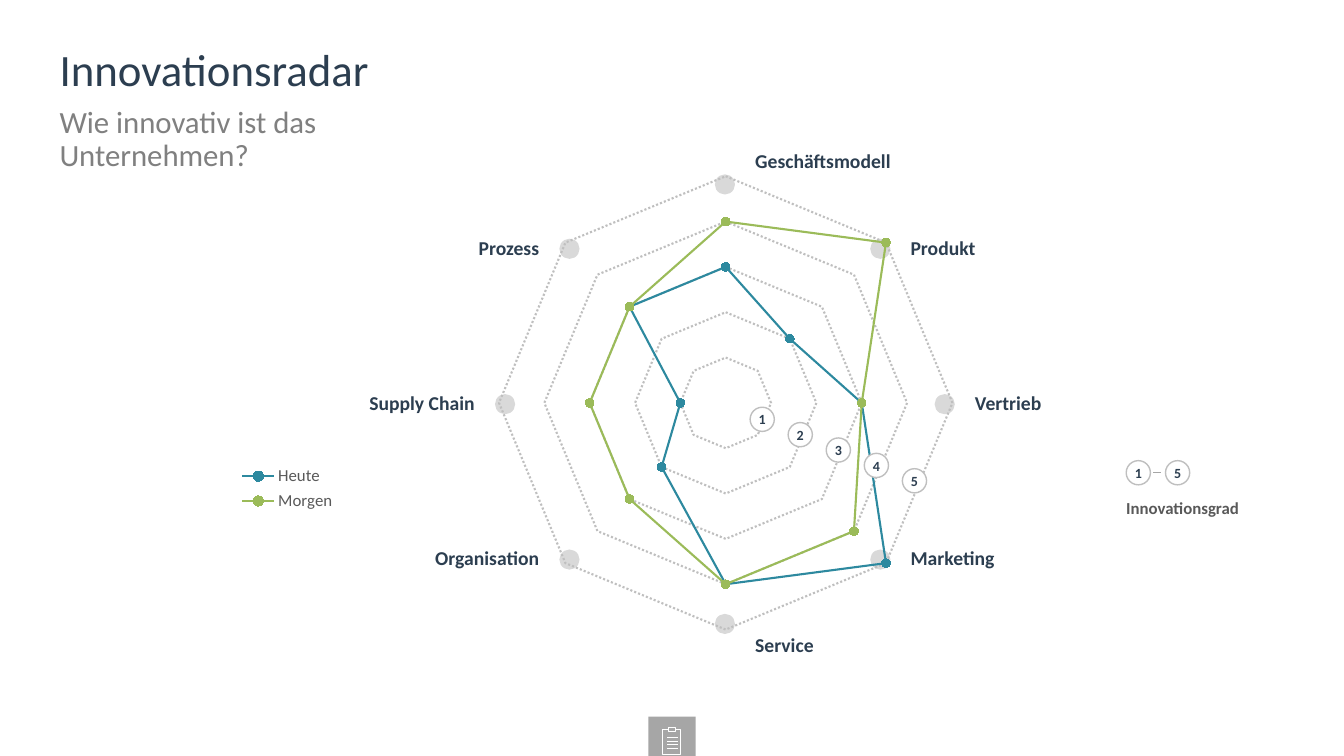
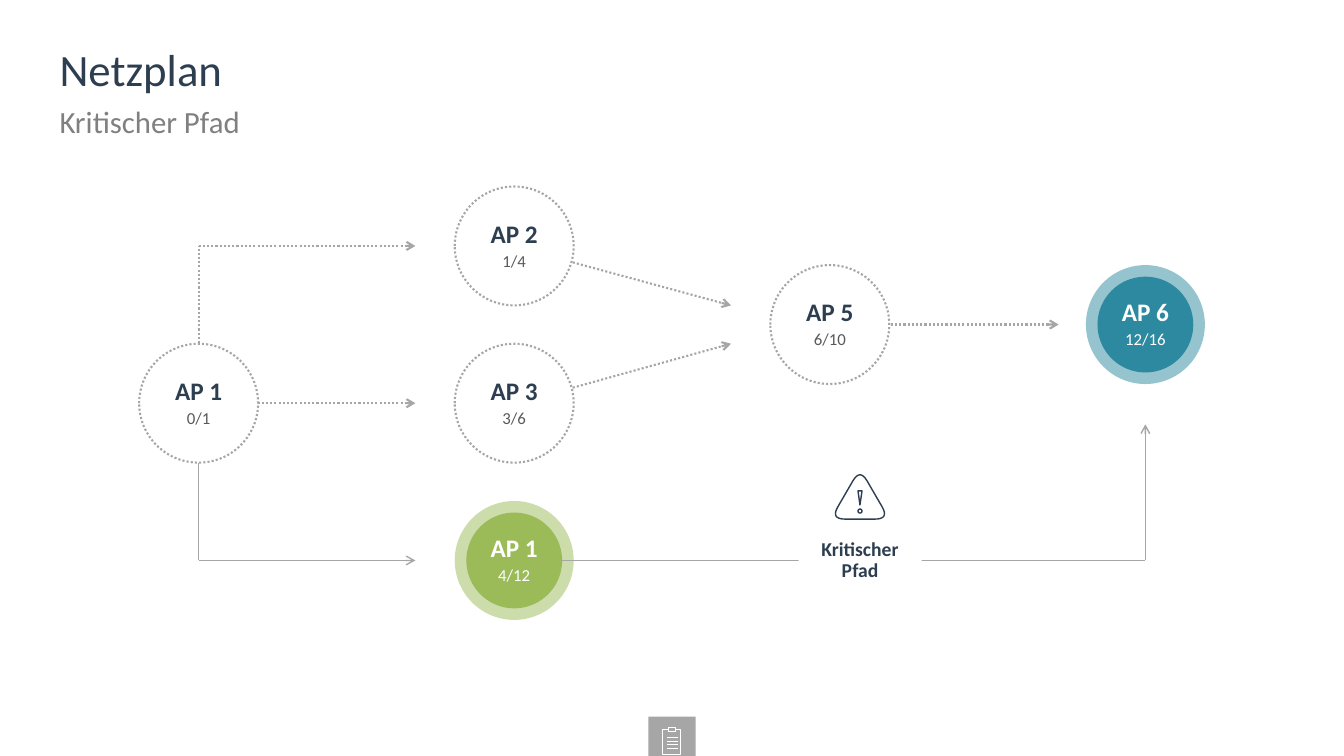
import math
from dataclasses import dataclass

import pptx
import pptx.chart.data
import pptx.dml.color
import pptx.enum.chart
import pptx.enum.dml
import pptx.enum.shapes
import pptx.enum.text
import pptx.oxml
import pptx.oxml.ns
import pptx.util
from pptx.util import Inches

ALIGN = pptx.enum.text.PP_ALIGN
ANCHOR = pptx.enum.text.MSO_ANCHOR
SHAPE = pptx.enum.shapes.MSO_SHAPE
qn = pptx.oxml.ns.qn


@dataclass(frozen=True)
class Theme:
    font: str = "Calibri"
    navy: str = "2C3E50"
    text: str = "595959"
    subtitle: str = "808080"
    line: str = "A6A6A6"
    ring: str = "BFBFBF"
    dot: str = "D9D9D9"
    white: str = "FFFFFF"
    teal: str = "2D899F"
    green: str = "9BBB59"
    title_pt: int = 32
    subtitle_pt: int = 22
    node_pt: int = 18
    label_pt: int = 14
    small_pt: int = 12
    badge_pt: int = 10


T = Theme()

# Radar slide
RADAR_TITLE = ("Innovationsradar", "Wie innovativ ist das\vUnternehmen?")
RADAR_LABELS = ["Geschäftsmodell", "Produkt", "Vertrieb", "Marketing",
                "Service", "Organisation", "Supply Chain", "Prozess"]
RADAR_SERIES = [
    ("Heute", [60, 40, 60, 100, 80, 40, 20, 60], T.teal),
    ("Morgen", [80, 100, 60, 80, 80, 60, 60, 60], T.green),
]
RADAR_CENTER, RADAR_RADIUS = (7.19, 4.01), 2.18
CHART_BOX = (2.22, 1.65, 8.89, 4.7)
PLOT_BOX = (4.95, 1.75, 4.5, 4.5)
LEGEND_BOX = (2.3, 4.58, 1.1, 0.54)

# Network slide: name, duration, column, half row, highlight colour
NET_TITLE = ("Netzplan", "Kritischer Pfad")
CRITICAL_START = ("AP 1", "4/12", 1, 4, T.green)
NODES = [
    ("AP 6", "12/16", 3, 1, T.teal),
    ("AP 5", "6/10", 2, 1, None),
    ("AP 2", "1/4", 1, 0, None),
    ("AP 3", "3/6", 1, 2, None),
    ("AP 1", "0/1", 0, 2, None),
]
COLS = [1.97 + 3.13 * i for i in range(4)]
ROWS = [2.44 + 0.78 * i for i in range(5)]
NODE_D, CORE_D = 1.18, 0.95
ARROW_X = 4.12
# Route points, dotted or not, arrowhead or not
LINKS = [
    ([(COLS[0], 3.53), (COLS[0], ROWS[0]), (ARROW_X, ROWS[0])], True),
    ([(COLS[0], ROWS[2]), (ARROW_X, ROWS[2])], True),
    ([(COLS[0], 4.59), (COLS[0], ROWS[4]), (ARROW_X, ROWS[4])], False),
    ([(5.57, ROWS[4]), (COLS[3], ROWS[4]), (COLS[3], 4.21)], False),
    ([(8.71, ROWS[1]), (10.5, ROWS[1])], True),
    ([(5.56, 2.57), (7.25, 3.03)], True),
    ([(5.56, 3.88), (7.25, 3.41)], True),
]


def rgb(color):
    return pptx.dml.color.RGBColor.from_string(color)


def box(values):
    return [Inches(v) for v in values]


def centered(x, y, w, h):
    return x - w / 2, y - h / 2, w, h


def style_line(line, color, width, dotted=False):
    line.color.rgb = rgb(color)
    line.width = pptx.util.Pt(width)
    if dotted:
        line.dash_style = pptx.enum.dml.MSO_LINE.ROUND_DOT


def paint(sp, fill=None, line=None, width=1, dotted=False):
    sp.shadow.inherit = False
    if fill:
        sp.fill.solid()
        sp.fill.fore_color.rgb = rgb(fill)
    else:
        sp.fill.background()
    if line:
        style_line(sp.line, line, width, dotted)
    else:
        sp.line.fill.background()
    return sp


def add_shape(slide, kind, at, **look):
    return paint(slide.shapes.add_shape(kind, *box(at)), **look)


def add_line(slide, start, end, color=T.line, width=1, dotted=False, arrow=False):
    c = slide.shapes.add_connector(pptx.enum.shapes.MSO_CONNECTOR.STRAIGHT,
                                   *box(start + end))
    style_line(c.line, color, width, dotted)
    sp_pr = c._element.spPr
    if arrow:
        tail = pptx.oxml.ns.qn("a:tailEnd")
        sp_pr.find(qn("a:ln")).makeelement(tail)
        ln = sp_pr.find(qn("a:ln"))
        ln.append(ln.makeelement(tail, {"type": "arrow"}))
    sp_pr.append(sp_pr.makeelement(qn("a:effectLst")))


def add_outline(slide, points):
    pts = [tuple(box(p)) for p in points]
    builder = slide.shapes.build_freeform(*pts[0])
    builder.add_line_segments(pts[1:], close=True)
    return paint(builder.convert_to_shape(), line=T.navy)


def write(sp, *paragraphs, align=ALIGN.LEFT, anchor=ANCHOR.TOP, wrap=True):
    """Fill a shape; each paragraph is (text, size, colour, bold, line spacing)."""
    tf = sp.text_frame
    tf.word_wrap = wrap
    tf.auto_size = pptx.enum.text.MSO_AUTO_SIZE.NONE
    tf.vertical_anchor = anchor
    tf.margin_left = tf.margin_right = tf.margin_top = tf.margin_bottom = 0
    for i, (text, size, color, bold, spacing) in enumerate(paragraphs):
        p = tf.add_paragraph() if i else tf.paragraphs[0]
        p.text = text
        p.alignment = align
        p.line_spacing = spacing
        p.space_before = p.space_after = pptx.util.Pt(0)
        p.font.name = T.font
        p.font.size = pptx.util.Pt(size)
        p.font.bold = bold
        p.font.color.rgb = rgb(color)


def add_label(slide, at, text, size, color, **layout):
    write(slide.shapes.add_textbox(*box(at)), (text, size, color, True, 0.9), **layout)


def add_clipboard_tab(slide):
    add_shape(slide, SHAPE.RECTANGLE, (6.43, 7.11, 0.47, 0.39), fill=T.line)
    for at in [(6.57, 7.24, 0.18, 0.25), (6.63, 7.22, 0.07, 0.04)]:
        add_shape(slide, SHAPE.RECTANGLE, at, fill=T.line, line=T.white, width=0.75)
    for i in range(4):
        y = 7.32 + 0.035 * i
        add_line(slide, (6.62, y), (6.72, y), T.white, 0.75)


def add_slide(prs, title, subtitle):
    slide = prs.slides.add_slide(prs.slide_layouts[1])
    heading, body = slide.placeholders
    body_pr = body.text_frame.paragraphs[0]._p.get_or_add_pPr()
    body_pr.set("marL", "0")
    body_pr.set("indent", "0")
    body_pr.append(body_pr.makeelement(qn("a:buNone")))
    for ph, top, text, size, color in [
            (heading, 0.47, title, T.title_pt, T.navy),
            (body, 1.06, subtitle, T.subtitle_pt, T.subtitle)]:
        ph.left, ph.top, ph.width, ph.height = box((0.59, top, 12.15, 0.59))
        write(ph, (text, size, color, False, 0.9))
    add_clipboard_tab(slide)
    return slide


def set_layout(parent, at, inner=False):
    """Pin a plot area or legend to a place given in slide inches."""
    left, top, width, height = CHART_BOX
    x, y, w, h = at
    for old in parent.findall(qn("c:layout")):
        parent.remove(old)
    target = '<c:layoutTarget val="inner"/>' if inner else ""
    layout = pptx.oxml.parse_xml(
        f'<c:layout {pptx.oxml.ns.nsdecls("c")}><c:manualLayout>{target}'
        '<c:xMode val="edge"/><c:yMode val="edge"/>'
        f'<c:x val="{(x - left) / width:.3f}"/><c:y val="{(y - top) / height:.3f}"/>'
        f'<c:w val="{w / width:.3f}"/><c:h val="{h / height:.3f}"/>'
        '</c:manualLayout></c:layout>')
    position = parent.find(qn("c:legendPos"))
    parent.insert(0 if position is None else 1, layout)


def add_radar(slide):
    data = pptx.chart.data.CategoryChartData()
    data.categories = [str(i + 1) for i in range(len(RADAR_LABELS))]
    for name, values, _ in RADAR_SERIES:
        data.add_series(name, values)
    chart = slide.shapes.add_chart(pptx.enum.chart.XL_CHART_TYPE.RADAR_MARKERS,
                                   *box(CHART_BOX), data).chart
    chart.has_title = False
    chart.font.name = T.font
    chart.font.size = pptx.util.Pt(T.badge_pt)
    chart.category_axis.visible = False
    axis = chart.value_axis
    axis.visible = False
    axis.minimum_scale, axis.maximum_scale, axis.major_unit = 0, 100, 20
    axis.has_major_gridlines = True
    style_line(axis.major_gridlines.format.line, T.ring, 1.5, dotted=True)
    chart.plots[0].vary_by_categories = False
    for series, (_, _, color) in zip(chart.plots[0].series, RADAR_SERIES):
        series.smooth = False
        style_line(series.format.line, color, 1.5)
        series.marker.style = pptx.enum.chart.XL_MARKER_STYLE.CIRCLE
        series.marker.size = 6
        series.marker.format.fill.solid()
        series.marker.format.fill.fore_color.rgb = rgb(color)
        style_line(series.marker.format.line, color, 0.75)
    chart.has_legend = True
    legend = chart.legend
    legend.position = pptx.enum.chart.XL_LEGEND_POSITION.LEFT
    legend.include_in_layout = False
    legend.font.name = T.font
    legend.font.size = pptx.util.Pt(T.small_pt)
    legend.font.color.rgb = rgb(T.text)
    set_layout(legend._element, LEGEND_BOX)
    set_layout(chart._chartSpace.chart.plotArea, PLOT_BOX, inner=True)


def add_badge(slide, left, top, number):
    sp = add_shape(slide, SHAPE.OVAL, (left, top, 0.24, 0.24), fill=T.white, line=T.ring)
    write(sp, (str(number), T.badge_pt, T.navy, True, 1.0),
          align=ALIGN.CENTER, anchor=ANCHOR.MIDDLE, wrap=False)


def build_radar_slide(prs):
    slide = add_slide(prs, *RADAR_TITLE)
    corners = []
    for i in range(len(RADAR_LABELS)):
        angle = 2 * math.pi * i / len(RADAR_LABELS)
        corners.append((RADAR_CENTER[0] + RADAR_RADIUS * math.sin(angle),
                        RADAR_CENTER[1] - RADAR_RADIUS * math.cos(angle)))
    for x, y in corners:
        add_shape(slide, SHAPE.OVAL, centered(x, y, 0.2, 0.2), fill=T.dot)
    add_radar(slide)
    shifts = {0: -0.22, 4: 0.22}
    for i, (text, (x, y)) in enumerate(zip(RADAR_LABELS, corners)):
        on_left = i > 4
        left = x - 0.3 - 1.57 if on_left else x + 0.3
        add_label(slide, (left, y + shifts.get(i, 0) - 0.12, 1.57, 0.24), text,
                  T.label_pt, T.navy, anchor=ANCHOR.MIDDLE,
                  align=ALIGN.RIGHT if on_left else ALIGN.LEFT)
    for i in range(5):
        add_badge(slide, 7.44 + 0.3775 * i, 4.04 + 0.1525 * i, i + 1)
    add_badge(slide, 11.17, 4.57, 1)
    add_badge(slide, 11.56, 4.57, 5)
    add_line(slide, (11.44, 4.69), (11.52, 4.69))
    add_label(slide, (11.17, 4.96, 1.57, 0.24), "Innovationsgrad", T.small_pt, T.text)


def add_node(slide, name, duration, col, row, highlight):
    x, y = COLS[col], ROWS[row]
    outer = centered(x, y, NODE_D, NODE_D)
    if highlight:
        halo = add_shape(slide, SHAPE.OVAL, outer, fill=highlight)
        color = halo._element.spPr.find(qn("a:solidFill"))[0]
        color.append(color.makeelement(qn("a:alpha"), {"val": "50000"}))
        sp = add_shape(slide, SHAPE.OVAL, centered(x, y, CORE_D, CORE_D), fill=highlight)
    else:
        sp = add_shape(slide, SHAPE.OVAL, outer, fill=T.white, line=T.line,
                       width=1.5, dotted=True)
    write(sp, (name, T.node_pt, T.white if highlight else T.navy, True, 0.9),
          (duration, T.small_pt, T.white if highlight else T.text, False, 1.1),
          align=ALIGN.CENTER, anchor=ANCHOR.MIDDLE, wrap=False)


def rounded(corners, cut=0.14, steps=8):
    """Polygon outline whose corners are quadratic curves."""
    points = []
    for i, v in enumerate(corners):
        ends = []
        for other in (corners[i - 1], corners[(i + 1) % len(corners)]):
            share = cut / math.dist(v, other)
            ends.append([a + (b - a) * share for a, b in zip(v, other)])
        for t in (k / steps for k in range(steps + 1)):
            points.append([(1 - t) ** 2 * a + 2 * t * (1 - t) * m + t ** 2 * b
                           for a, m, b in zip(ends[0], v, ends[1])])
    return points


def build_network_slide(prs):
    slide = add_slide(prs, *NET_TITLE)
    add_node(slide, *CRITICAL_START)
    for points, dotted in LINKS:
        for i in range(1, len(points)):
            add_line(slide, points[i - 1], points[i], width=1.5 if dotted else 1,
                     dotted=dotted, arrow=i == len(points) - 1)
    for node in NODES:
        add_node(slide, *node)
    sp = add_shape(slide, SHAPE.RECTANGLE, (7.92, 5.35, 1.22, 0.42), fill=T.white)
    write(sp, ("Kritischer\vPfad", T.label_pt, T.navy, True, 0.9),
          align=ALIGN.CENTER, anchor=ANCHOR.MIDDLE, wrap=False)
    add_outline(slide, rounded([(8.53, 4.65), (8.82, 5.15), (8.24, 5.15)]))
    add_outline(slide, [(8.51, 4.87), (8.55, 4.87), (8.53, 5.01)])
    add_shape(slide, SHAPE.OVAL, (8.51, 5.05, 0.04, 0.04), line=T.navy)


def main():
    prs = pptx.Presentation()
    prs.slide_width, prs.slide_height = box((13.33, 7.5))
    build_radar_slide(prs)
    build_network_slide(prs)
    prs.save("out.pptx")


if __name__ == "__main__":
    main()
